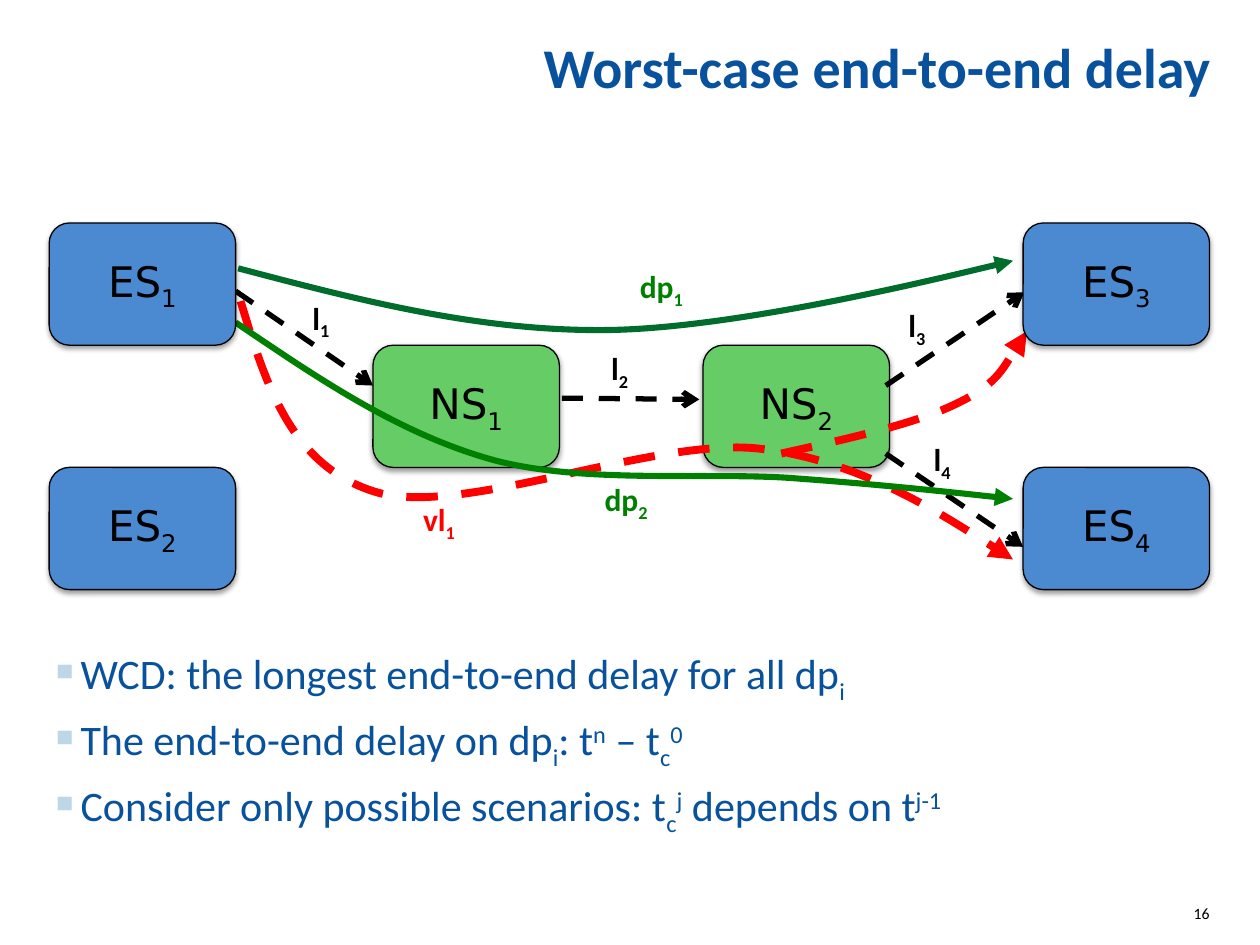
from lxml import etree
from pptx import Presentation
from pptx import util as u
from pptx.dml.color import RGBColor
from pptx.enum import dml, shapes, text
from pptx.oxml.ns import qn

COLORS = {"title": "08519C", "bullet": "BDD7E7", "switch": "66CC66", "end": "4B89D0",
          "black": "000000", "red": "FF0000", "pine": "006D2C", "green": "008000"}
BASE = {"_": "-25000", "^": "30000"}
AL = text.PP_ALIGN

prs = Presentation()
prs.slide_width, prs.slide_height = u.Inches(10), u.Inches(7.5)
s = prs.slides.add_slide(prs.slide_layouts[6])
cell = prs.slide_width // 100
COLS = [3.9, 29.6, 55.8, 81.2]
TOP, ROW, NODE_W = 17.7, 9.7, 14.8


def write(sp, lines, size, color, font="Calibri", bold=False, align=AL.LEFT,
          anchor=text.MSO_ANCHOR.TOP, inset=0):
    tf = sp.text_frame
    tf.word_wrap = True
    tf.vertical_anchor = anchor
    tf.margin_left = tf.margin_right = u.Inches(inset)
    tf.margin_top = tf.margin_bottom = u.Inches(inset / 2)
    for i, line in enumerate(lines):
        p = tf.paragraphs[0] if i == 0 else tf.add_paragraph()
        p.alignment = align
        for part in line.split("|"):
            r = p.add_run()
            r.text = part.lstrip("_^")
            r.font.size, r.font.name, r.font.bold = u.Pt(size), font, bold
            r.font.color.rgb = RGBColor.from_string(COLORS[color])
            if part[0] in BASE:
                r.font._element.set("baseline", BASE[part[0]])
    return tf


def node(label, col, row, color):
    sp = s.shapes.add_shape(shapes.MSO_SHAPE.ROUNDED_RECTANGLE, int(COLS[col] * cell),
                            int((TOP + row * ROW) * cell), int(NODE_W * cell), int(ROW * cell))
    sp.fill.solid()
    sp.fill.fore_color.rgb = RGBColor.from_string(COLORS[color])
    sp.line.color.rgb = RGBColor.from_string(COLORS["black"])
    sp.line.width = u.Pt(0.75)
    sp.shadow.inherit = False
    effects = sp._element.spPr.find(qn("a:effectLst"))
    shadow = etree.SubElement(effects, qn("a:outerShdw"), blurRad=str(u.Pt(3.1)),
                              dist=str(u.Pt(1.6)), dir="5400000", rotWithShape="0")
    black = etree.SubElement(shadow, qn("a:srgbClr"), val=COLORS["black"])
    etree.SubElement(black, qn("a:alpha"), val="38000")
    write(sp, [label], 24, "black", "DejaVu Sans", align=AL.CENTER,
          anchor=text.MSO_ANCHOR.MIDDLE)


number = s.shapes.add_textbox(*[int(v * cell) for v in (92.7, 71.7, 3.3, 3.3)])
write(number, ["16"], 9, "black", align=AL.RIGHT)

title = s.shapes.add_textbox(*[int(v * cell) for v in (3.9, 0, 92.2, 7.9)])
tf = write(title, ["Worst-case end-to-end delay"], 32, "title", bold=True, align=AL.RIGHT,
           anchor=text.MSO_ANCHOR.BOTTOM)
tf.paragraphs[0].line_spacing = 0.8

body = s.shapes.add_textbox(*[int(v * cell) for v in (3.9, 51.4, 92.1, 17.3)])
tf = write(body, ["WCD: the longest end-to-end delay for all dp|_i",
                  "The end-to-end delay on dp|_i|: t|^n| – t|_c|^0",
                  "Consider only possible scenarios: t|_c|^j| depends on t|^j-1"], 24, "title")
for p in tf.paragraphs:
    p.space_before = u.Pt(5)
    pPr = p._p.get_or_add_pPr()
    pPr.set("marL", str(u.Inches(0.2)))
    pPr.set("indent", str(u.Inches(-0.24)))
    bullet = etree.SubElement(pPr, qn("a:buClr"))
    etree.SubElement(bullet, qn("a:srgbClr"), val=COLORS["bullet"])
    etree.SubElement(pPr, qn("a:buChar"), char="▪")

node("NS|_1", 1, 1, "switch")
node("NS|_2", 2, 1, "switch")

strokes = []
for ends in [(18.7, 23.1, 29.6, 30.6), (70.3, 36, 81.2, 43.4),
             (70.3, 30.6, 81.3, 23.2), (44.6, 31.6, 55.5, 31.7)]:
    link = s.shapes.add_connector(shapes.MSO_CONNECTOR.STRAIGHT, *[int(v * cell) for v in ends])
    strokes.append((link, "black", 3, True, "arrow"))

curves = [
    ("red", 4.5, True, [(62, 36), (67.4, 34.8), (72.8, 33.6), (76, 32),
                        (79.3, 30.4), (81.5, 26.3), (81.5, 26.3)]),
    ("red", 4.5, True, [(19.1, 23.9), (21.1, 30.5), (23.1, 37.1), (30, 39.1), (36.9, 41),
                        (51.8, 34.7), (60.2, 35.6), (68.6, 36.5), (80.4, 44.4), (80.4, 44.4)]),
    ("pine", 3.5, False, [(18.9, 21.3), (28.4, 23.8), (37.9, 26.3), (48.1, 26.2),
                          (58.4, 26.1), (80.4, 20.7), (80.4, 20.7)]),
    ("green", 3.5, False, [(18.7, 25.6), (25.2, 30), (31.6, 34.4), (39.1, 36.5), (46.5, 38.5),
                           (56.6, 37.4), (63.5, 38), (70.4, 38.5), (80.4, 39.6), (80.4, 39.6)]),
]
for color, width, dashed, points in curves:
    points = [(round(x * 10), round(y * 10)) for x, y in points]
    fb = s.shapes.build_freeform(*points[0], scale=cell / 10)
    fb.add_line_segments(points[1:], close=False)
    sp = fb.convert_to_shape()
    sp.fill.background()
    outline = next(sp._element.iter(qn("a:path")))
    segments = outline.findall(qn("a:lnTo"))
    for i in range(0, len(segments), 3):
        bezier = etree.SubElement(outline, qn("a:cubicBezTo"))
        for segment in segments[i:i + 3]:
            bezier.append(segment[0])
            outline.remove(segment)
    strokes.append((sp, color, width, dashed, "triangle"))

for sp, color, width, dashed, head in strokes:
    sp.line.color.rgb = RGBColor.from_string(COLORS[color])
    sp.line.width = u.Pt(width)
    if dashed:
        sp.line.dash_style = dml.MSO_LINE.DASH
    spPr = sp._element.spPr
    etree.SubElement(spPr.find(qn("a:ln")), qn("a:tailEnd"), type=head)
    etree.SubElement(spPr, qn("a:effectLst"))

for label, x, y, w, h, color, inset in [
        ("dp|_1", 49.8, 20.7, 8.8, 4, "green", 0.1),
        ("vl|_1", 32.6, 39.2, 5.3, 4, "red", 0.1),
        ("dp|_2", 47, 37.6, 8.8, 4, "green", 0.1),
        ("l|_1", 24.8, 23.7, 2.4, 3, "black", 0),
        ("l|_2", 48.5, 27.7, 2.4, 3, "black", 0),
        ("l|_3", 72.1, 24.3, 2.4, 3, "black", 0),
        ("l|_4", 74.1, 34.9, 2.4, 3, "black", 0)]:
    sp = s.shapes.add_textbox(*[int(v * cell) for v in (x, y, w, h)])
    write(sp, [label], 18, color, bold=True, inset=inset)

for i in range(4):
    node(f"ES|_{i + 1}", i // 2 * 3, i % 2 * 2, "end")

prs.save("out.pptx")
